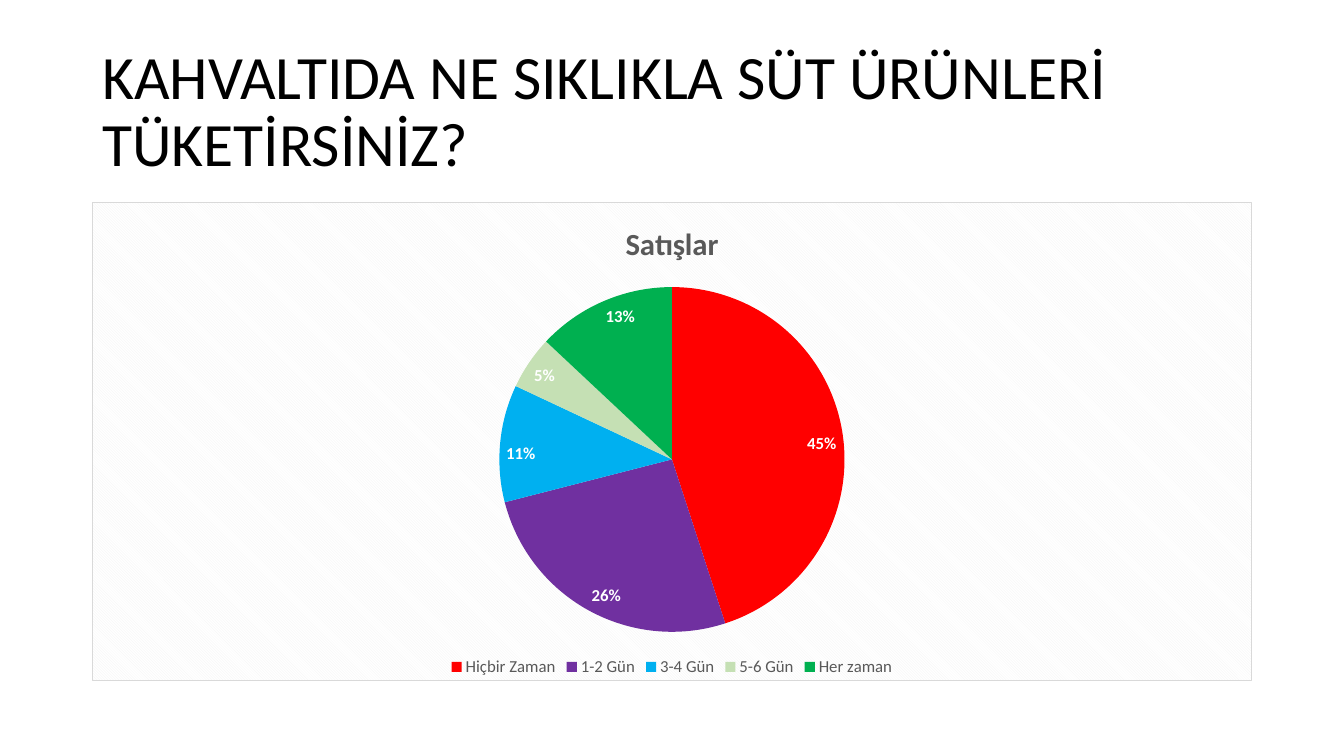
"""Build the slide on how often dairy is eaten at breakfast."""
from dataclasses import dataclass

from pptx import Presentation
from pptx import util as u
from pptx.chart.chart import Chart
from pptx.chart.data import CategoryChartData
from pptx.dml.color import RGBColor
from pptx.enum import chart as charts, text
from pptx.oxml import parse_xml
from pptx.oxml.ns import nsdecls
from pptx.slide import Slide
from pptx.text.text import Font

PX = 9525
FONT = "Calibri"
BLACK = RGBColor(0x00, 0x00, 0x00)
WHITE = RGBColor(0xFF, 0xFF, 0xFF)
GREY = RGBColor(0x59, 0x59, 0x59)
BORDER = RGBColor(0xD9, 0xD9, 0xD9)
HATCH = RGBColor(0xF2, 0xF2, 0xF2)
RED = RGBColor(0xFF, 0x00, 0x00)
PURPLE = RGBColor(0x70, 0x30, 0xA0)
BLUE = RGBColor(0x00, 0xB0, 0xF0)
PALE_GREEN = RGBColor(0xC5, 0xE0, 0xB4)
GREEN = RGBColor(0x00, 0xB0, 0x50)

LEFT, WIDTH = 88, 1104
QUESTION = "KAHVALTIDA NE SIKLIKLA SÜT ÜRÜNLERİ TÜKETİRSİNİZ?"
SERIES = "Satışlar"


@dataclass(frozen=True)
class Answer:
    """One slice of the pie."""
    label: str
    percent: int
    color: RGBColor


ANSWERS = [
    Answer("Hiçbir Zaman", 45, RED),
    Answer("1-2 Gün", 26, PURPLE),
    Answer("3-4 Gün", 11, BLUE),
    Answer("5-6 Gün", 5, PALE_GREEN),
    Answer("Her zaman", 13, GREEN),
]


def px(length: int) -> u.Emu:
    """Turn pixels into EMU."""
    return u.Emu(length * PX)


def style(font: Font, size: int, color: RGBColor, bold: bool = False) -> None:
    """Set the face, size, colour and weight of a font."""
    font.name, font.size, font.bold = FONT, u.Pt(size), bold
    font.color.rgb = color


def add_question(slide: Slide) -> None:
    """Write the question at the top of the slide."""
    box = slide.shapes.add_textbox(px(LEFT), px(38), px(WIDTH), px(139))
    frame = box.text_frame
    frame.word_wrap = True
    frame.vertical_anchor = text.MSO_ANCHOR.MIDDLE
    frame.text = QUESTION
    paragraph = frame.paragraphs[0]
    paragraph.line_spacing = 0.9
    style(paragraph.runs[0].font, 44, BLACK)


def fill_chart_area(chart: Chart) -> None:
    """Give the chart area its hatched fill and thin border."""
    area = parse_xml(
        f'<c:spPr {nsdecls("c", "a")}><a:pattFill prst="dkDnDiag">'
        f'<a:fgClr><a:srgbClr val="{HATCH}"/></a:fgClr>'
        f'<a:bgClr><a:srgbClr val="{WHITE}"/></a:bgClr></a:pattFill>'
        f'<a:ln w="{u.Pt(0.75)}"><a:solidFill><a:srgbClr val="{BORDER}"/>'
        '</a:solidFill></a:ln></c:spPr>')
    chart.element.find(f"{{{chart.element.nsmap['c']}}}chart").addnext(area)


def add_answers(slide: Slide) -> None:
    """Draw the pie of answers with its title, labels and legend."""
    data = CategoryChartData()
    data.categories = [answer.label for answer in ANSWERS]
    data.add_series(SERIES, [answer.percent for answer in ANSWERS])
    chart = slide.shapes.add_chart(
        charts.XL_CHART_TYPE.PIE, px(LEFT), px(192), px(WIDTH), px(457), data).chart
    style(chart.font, 10, BLACK)
    fill_chart_area(chart)

    chart.has_title = True
    heading = chart.chart_title.text_frame
    heading.text = SERIES
    style(heading.paragraphs[0].runs[0].font, 22, GREY, bold=True)

    chart.has_legend = True
    chart.legend.position = charts.XL_LEGEND_POSITION.BOTTOM
    chart.legend.include_in_layout = False
    style(chart.legend.font, 12, GREY)

    pie = chart.plots[0]
    pie.vary_by_categories = True
    for index, answer in enumerate(ANSWERS):
        fill = pie.series[0].points[index].format.fill
        fill.solid()
        fill.fore_color.rgb = answer.color

    pie.has_data_labels = True
    labels = pie.data_labels
    labels.show_percentage = True
    labels.show_value = False
    labels.number_format = "0%"
    labels.number_format_is_linked = False
    labels.position = charts.XL_LABEL_POSITION.INSIDE_END
    style(labels.font, 12, WHITE, bold=True)


def main() -> None:
    """Build and save the presentation."""
    deck = Presentation()
    deck.slide_width, deck.slide_height = px(1280), px(720)
    slide = deck.slides.add_slide(deck.slide_layouts[6])
    add_question(slide)
    add_answers(slide)
    deck.save("out.pptx")


if __name__ == "__main__":
    main()
